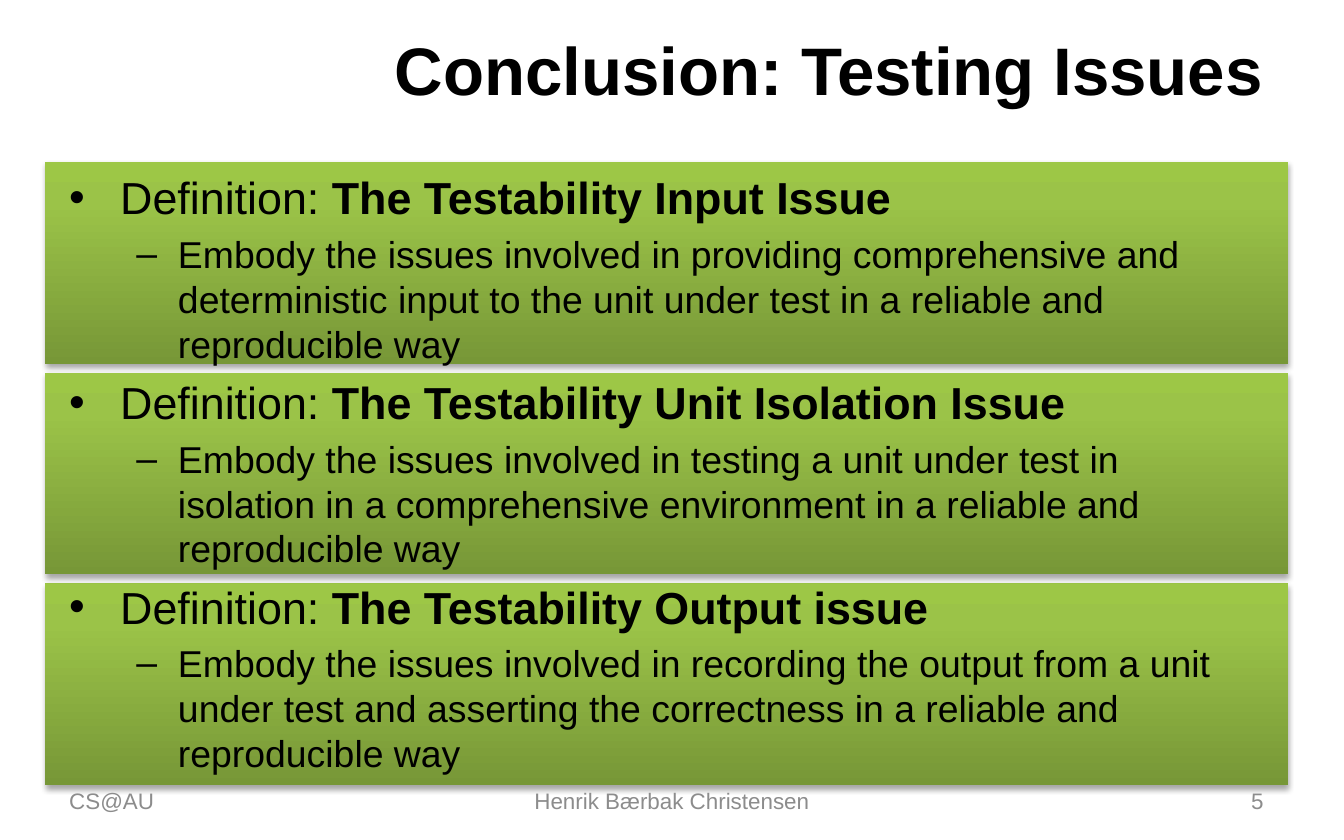
"""Build the slide on testability issues: three definitions on green bands."""
from pptx import Presentation
from pptx import util as u
from pptx.dml.color import RGBColor
from pptx.enum import shapes, text
from pptx.oxml import parse_xml
from pptx.oxml.ns import nsdecls

deck = Presentation()
deck.slide_width, deck.slide_height = u.Inches(10), u.Inches(6.25)
col, row = deck.slide_width / 120, deck.slide_height / 75
slide = deck.slides.add_slide(deck.slide_layouts.get_by_name("Title Only"))
align = text.PP_ALIGN


def area(x, y, wide, high):
    return [round(n) for n in (x * col, y * row, wide * col, high * row)]


def style(run, size, tint="000000", bold=False):
    font = run.font
    font.name, font.size, font.bold = "Arial", u.Pt(size), bold
    font.color.rgb = RGBColor.from_string(tint)


stops = "".join(
    f'<a:gs pos="{pos * 1000}"><a:srgbClr val="{tint}"/></a:gs>'
    for pos, tint in ((0, "779737"), (80, "9BC348"), (100, "9DC746")))
grad = (f'<a:gradFill {nsdecls("a")} rotWithShape="1"><a:gsLst>{stops}</a:gsLst>'
        '<a:lin ang="16200000" scaled="0"/></a:gradFill>')
shade = (f'<a:effectLst {nsdecls("a")}><a:outerShdw blurRad="{u.Pt(3.1)}" '
         f'dist="{u.Pt(1.8)}" dir="5400000" rotWithShape="0"><a:srgbClr val="000000">'
         '<a:alpha val="35000"/></a:srgbClr></a:outerShdw></a:effectLst>')
for i in reversed(range(3)):
    band = slide.shapes.add_shape(
        shapes.MSO_SHAPE.RECTANGLE, *area(4, 14.5 + 18.8 * i, 111, 18))
    props = band.element.spPr
    props.append(parse_xml(grad))
    band.line.fill.background()
    props.append(parse_xml(shade))

title = slide.shapes.title
title.left, title.top, title.width, title.height = area(6, 2.2, 108, 7.8)
frame = title.text_frame
frame.text = "Conclusion: Testing Issues"
frame.auto_size = text.MSO_AUTO_SIZE.NONE
frame.vertical_anchor = text.MSO_ANCHOR.MIDDLE
frame.paragraphs[0].alignment = align.RIGHT
style(frame.paragraphs[0].runs[0], 36, bold=True)

issues = (
    ("The Testability Input Issue",
     "Embody the issues involved in providing comprehensive and deterministic "
     "input to the unit under test in a reliable and reproducible way"),
    ("The Testability Unit Isolation Issue",
     "Embody the issues involved in testing a unit under test in isolation "
     "in a comprehensive environment in a reliable and reproducible way"),
    ("The Testability Output issue",
     "Embody the issues involved in recording the output from a unit under test "
     "and asserting the correctness in a reliable and reproducible way"),
)
body = slide.shapes.add_textbox(*area(5, 14.6, 109, 54.7)).text_frame
body.word_wrap = True
for name, note in issues:
    for level, size, left, hang, mark, parts in (
            (0, 24, 0.38, 0.38, "•", ("Definition: ", name)),
            (1, 20, 0.81, 0.31, "–", (note,))):
        first = not body.paragraphs[0].runs
        para = body.paragraphs[0] if first else body.add_paragraph()
        para.level = level
        para.line_spacing = u.Pt(1.2 * size)
        if not first:
            para.space_before = u.Pt(0.2 * size)
        props = para._p.get_or_add_pPr()
        props.set("marL", str(u.Inches(left)))
        props.set("indent", str(-u.Inches(hang)))
        props.append(parse_xml(f'<a:buFont {nsdecls("a")} typeface="Arial"/>'))
        props.append(parse_xml(f'<a:buChar {nsdecls("a")} char="{mark}"/>'))
        for part in parts:
            run = para.add_run()
            run.text = part
            style(run, size, bold=part == name)

for x, wide, side, label in ((5, 28, align.LEFT, "CS@AU"),
                             (41, 38, align.CENTER, "Henrik Bærbak Christensen"),
                             (86, 28, align.RIGHT, "5")):
    foot = slide.shapes.add_textbox(*area(x, 69.5, wide, 4)).text_frame
    foot.text = label
    foot.word_wrap = True
    foot.vertical_anchor = text.MSO_ANCHOR.MIDDLE
    foot.paragraphs[0].alignment = side
    style(foot.paragraphs[0].runs[0], 12, "8C8C8C")

deck.save("out.pptx")
